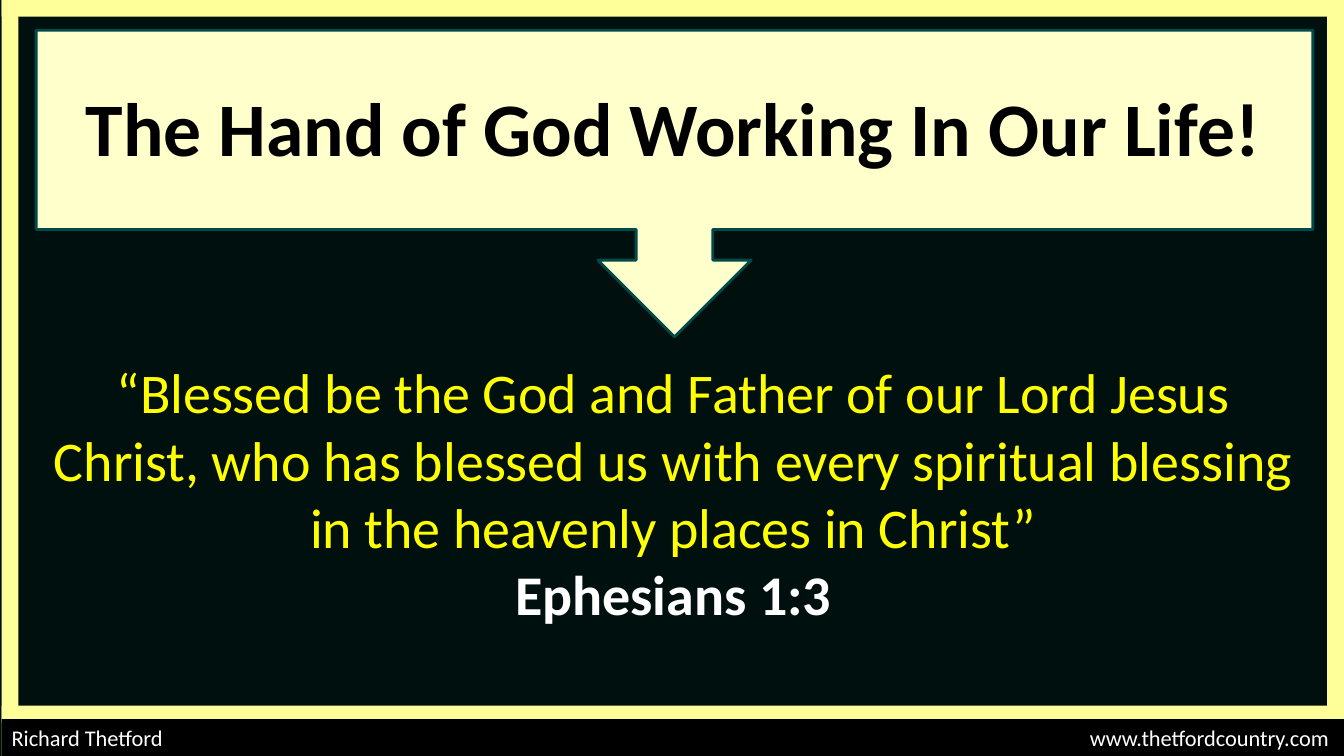
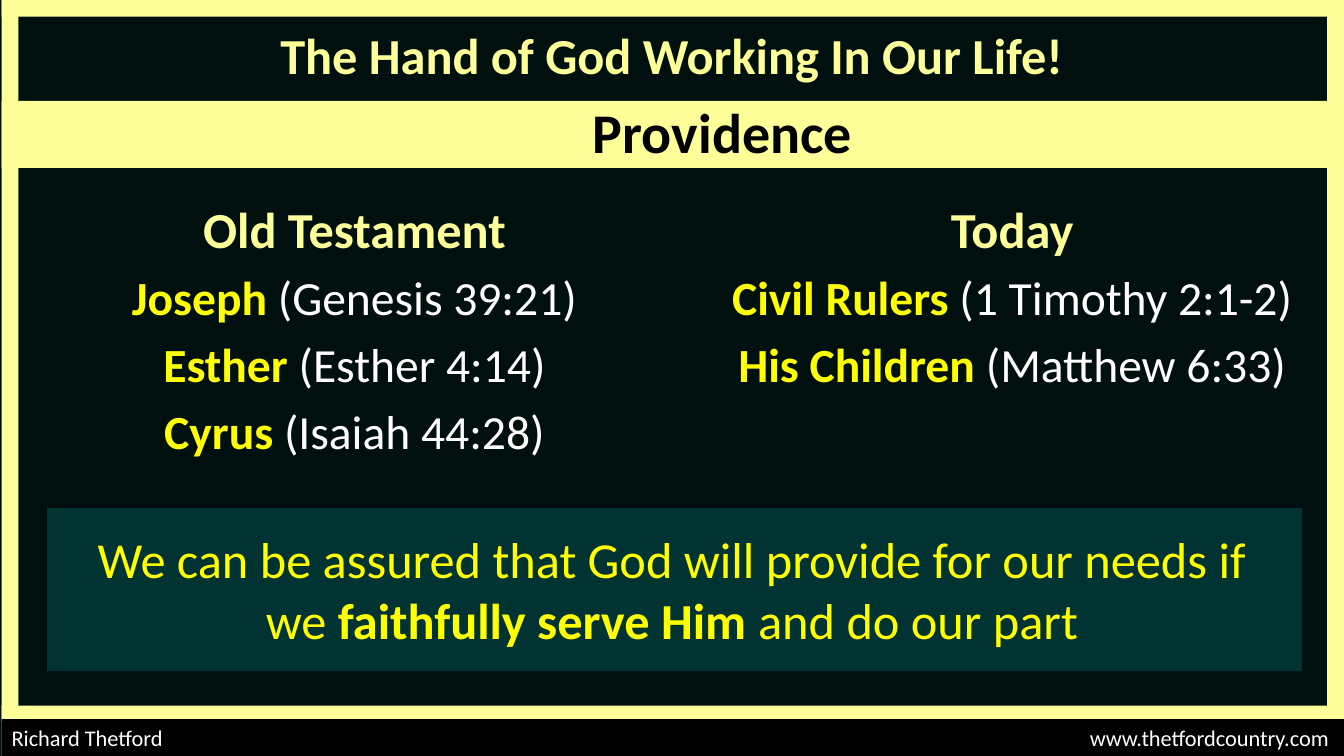
from lxml import etree
from pptx import Presentation
from pptx.dml.color import RGBColor
from pptx.enum.shapes import MSO_SHAPE as Preset
from pptx.enum.text import MSO_ANCHOR as Anchor, MSO_AUTO_SIZE as AutoSize, PP_ALIGN as Align
from pptx.oxml.ns import qn
from pptx.util import Inches, Pt

COLUMNS, ROWS = 80, 45
CELL = Inches(1) / 6
EDGE = 0.1
FONT = "Calibri"
TITLE = "The Hand of God Working In Our Life!"
COLORS = {
    "background": "00100F",
    "frame": "FFFF99",
    "callout": "FFFFCC",
    "outline": "004A49",
    "panel": "003332",
    "yellow": "FFFF00",
    "white": "FFFFFF",
    "black": "000000",
}


def color_of(name):
    return RGBColor.from_string(COLORS[name])


def cells(*numbers):
    return [round(number * CELL) for number in numbers]


def place(shape, area):
    shape.left, shape.top, shape.width, shape.height = cells(*area)
    return shape


def write_text(shape, paragraphs, size, color="white", bold=False,
               align=Align.CENTER, anchor=Anchor.TOP, space=0):
    frame = shape.text_frame
    frame.word_wrap = True
    frame.auto_size = AutoSize.NONE
    frame.vertical_anchor = anchor
    for index, runs in enumerate(paragraphs):
        paragraph = frame.add_paragraph() if index else frame.paragraphs[0]
        paragraph.alignment = align
        paragraph.space_before = Pt(space)
        properties = paragraph._p.get_or_add_pPr()
        properties.set("marL", "0")
        properties.set("indent", "0")
        etree.SubElement(properties, qn("a:buNone"))
        for text, changes in runs:
            style = {"size": size, "color": color, "bold": bold, **changes}
            run = paragraph.add_run()
            run.text = text
            run.font.name = FONT
            run.font.size = Pt(style["size"])
            run.font.bold = style["bold"]
            run.font.color.rgb = color_of(style["color"])


def add_block(slide, area, fill, preset=Preset.RECTANGLE, outline=None):
    shape = slide.shapes.add_shape(preset, *cells(*area))
    shape.shadow.inherit = False
    shape.fill.solid()
    shape.fill.fore_color.rgb = color_of(fill)
    if outline:
        shape.line.color.rgb = color_of(outline)
        shape.line.width = Pt(2)
    else:
        shape.line.fill.background()
    return shape


def add_text(slide, area, paragraphs, size, **style):
    box = slide.shapes.add_textbox(*cells(*area))
    write_text(box, paragraphs, size, **style)


def add_title(slide, area, size, color):
    title = place(slide.shapes.title, area)
    write_text(title, [[(TITLE, {})]], size, color=color, bold=True, anchor=Anchor.MIDDLE)
    return title


def add_frame(slide):
    width = COLUMNS - EDGE
    for area in ((EDGE, 0, 1, ROWS), (COLUMNS - 1, 0, 1, ROWS),
                 (EDGE, 0, width, 1), (EDGE, 42, width, 1)):
        add_block(slide, area, "frame")
    footer = (EDGE, 42.8, width, 2.2)
    band = add_block(slide, footer, "black")
    write_text(band, [[("Richard Thetford", {})]], 16,
               align=Align.LEFT, anchor=Anchor.MIDDLE)
    add_text(slide, (40, 42.8, 39.7, 2.2), [[("www.thetfordcountry.com", {})]], 16,
             align=Align.RIGHT, anchor=Anchor.MIDDLE)


def add_list(placeholder, area, heading, items):
    paragraphs = [[(heading, {"size": 36, "color": "frame", "bold": True})]]
    for name, verse in items:
        paragraphs.append([(f"{name} ", {"color": "yellow", "bold": True}), (f"({verse})", {})])
    write_text(place(placeholder, area), paragraphs, 34, space=6.8)


def build_verse_slide(presentation):
    slide = presentation.slides.add_slide(presentation.slide_layouts[0])
    add_frame(slide)
    callout = add_block(slide, (2.15, 1.8, 76, 18.25), "callout",
                        preset=Preset.DOWN_ARROW_CALLOUT, outline="outline")
    title = add_title(slide, (2.15, 2.5, 75.85, 10), 54, "black")
    title.element.addprevious(callout.element)
    verse = place(slide.placeholders[1], (2.15, 21, 75.85, 16.75))
    write_text(verse, [
        [("“Blessed be the God and Father of our Lord Jesus Christ, who has blessed us "
          "with every spiritual blessing in the heavenly places in Christ”", {})],
        [("Ephesians 1:3", {"color": "white", "bold": True})],
    ], 40, color="yellow")


def build_providence_slide(presentation):
    slide = presentation.slides.add_slide(presentation.slide_layouts[3])
    add_frame(slide)
    add_title(slide, (11, 1, 58, 4.5), 36, "frame")
    add_block(slide, (EDGE, 6, 79.75, 4), "frame")
    add_text(slide, (17, 5.5, 52, 4.6), [[("Providence", {})]], 40, color="black", bold=True)
    add_list(slide.placeholders[1], (1.15, 11.5, 39.9, 19.5), "Old Testament", [
        ("Joseph", "Genesis 39:21"),
        ("Esther", "Esther 4:14"),
        ("Cyrus", "Isaiah 44:28"),
    ])
    add_list(slide.placeholders[2], (41.5, 11.5, 37.5, 19.5), "Today", [
        ("Civil Rulers", "1 Timothy 2:1-2"),
        ("His Children", "Matthew 6:33"),
    ])
    add_block(slide, (2.8, 30.25, 74.7, 9.7), "panel")
    add_text(slide, (4, 31.15, 72, 7.85), [[
        ("We can be assured that God will provide for our needs if we ", {}),
        ("faithfully serve Him ", {"bold": True}),
        ("and do our part", {}),
    ]], 36, color="yellow")


def main():
    presentation = Presentation()
    presentation.slide_width, presentation.slide_height = cells(COLUMNS, ROWS)
    background = presentation.slide_master.background.fill
    background.solid()
    background.fore_color.rgb = color_of("background")
    build_verse_slide(presentation)
    build_providence_slide(presentation)
    presentation.save("out.pptx")


if __name__ == "__main__":
    main()
